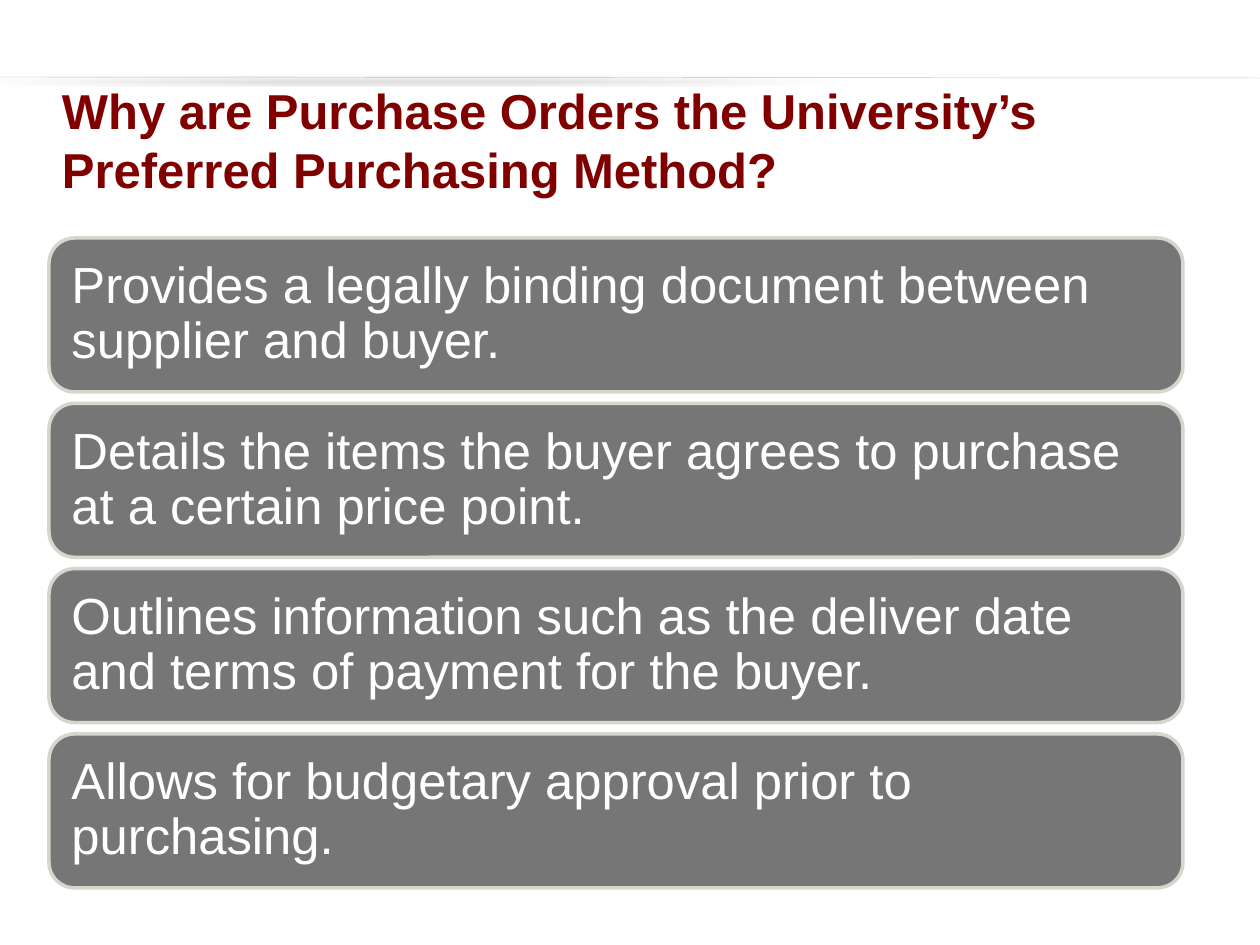
from lxml.etree import SubElement
from pptx import Presentation
from pptx.dml.color import RGBColor
from pptx.enum.shapes import MSO_CONNECTOR, MSO_SHAPE
from pptx.enum.text import MSO_ANCHOR, PP_ALIGN
from pptx.oxml.ns import qn
from pptx.util import Pt

EMU_PER_PX = 914400 // 126

MAROON = RGBColor(0x80, 0x00, 0x00)
WHITE = RGBColor(0xFF, 0xFF, 0xFF)
CARD_GRAY = RGBColor(0x76, 0x76, 0x76)
CARD_BORDER = RGBColor(0xD6, 0xD6, 0xCE)
RULE_GRAY = RGBColor(0xBF, 0xBF, 0xBF)

TITLE = "Why are Purchase Orders the University’s Preferred Purchasing Method?"
REASONS = [
    "Provides a legally binding document between supplier and buyer.",
    "Details the items the buyer agrees to purchase at a certain price point.",
    "Outlines information such as the deliver date and terms of payment for the buyer.",
    "Allows for budgetary approval prior to purchasing.",
]
CARD_LEFT, CARD_WIDTH, CARD_HEIGHT = 49, 1134, 154
FIRST_CARD_TOP, LAST_CARD_TOP = 238, 734


def px(length):
    return round(length * EMU_PER_PX)


def write_text(shape, text, *, size, color, bold=False, spacing=1.0, inset=13):
    frame = shape.text_frame
    frame.word_wrap = True
    frame.vertical_anchor = MSO_ANCHOR.MIDDLE
    frame.margin_left = frame.margin_right = px(inset)
    frame.margin_top = frame.margin_bottom = px(6)
    paragraph = frame.paragraphs[0]
    paragraph.alignment = PP_ALIGN.LEFT
    paragraph.line_spacing = spacing
    run = paragraph.add_run()
    run.text = text
    run.font.name = "Arial"
    run.font.size = Pt(size)
    run.font.bold = bold
    run.font.color.rgb = color


def add_header_rule(slide):
    rule = slide.shapes.add_connector(
        MSO_CONNECTOR.STRAIGHT, 0, px(77), px(1260), px(78))
    rule.line.color.rgb = RULE_GRAY
    rule.line.width = Pt(0.25)
    # Soft shadow falling below the rule
    effects = SubElement(rule._element.spPr, qn("a:effectLst"))
    shadow = SubElement(effects, qn("a:outerShdw"), blurRad=str(Pt(3.1)),
                        dist=str(Pt(1.6)), dir="5400000", rotWithShape="0")
    color = SubElement(shadow, qn("a:srgbClr"), val="000000")
    SubElement(color, qn("a:alpha"), val="38000")


def add_title(slide):
    title = slide.shapes.add_textbox(px(49), px(91), px(1163), px(96))
    write_text(title, TITLE, size=28, color=MAROON, bold=True)


def add_reason_card(slide, top, text):
    card = slide.shapes.add_shape(
        MSO_SHAPE.ROUNDED_RECTANGLE,
        px(CARD_LEFT), px(top), px(CARD_WIDTH), px(CARD_HEIGHT))
    card.shadow.inherit = False
    card.fill.solid()
    card.fill.fore_color.rgb = CARD_GRAY
    card.line.color.rgb = CARD_BORDER
    card.line.width = Pt(2)
    write_text(card, text, size=29, color=WHITE, spacing=0.9, inset=15)


def main():
    presentation = Presentation()
    presentation.slide_width = px(1260)
    presentation.slide_height = px(945)
    slide = presentation.slides.add_slide(presentation.slide_layouts[6])

    # Header
    add_header_rule(slide)
    add_title(slide)

    # Evenly stacked reasons
    pitch = (LAST_CARD_TOP - FIRST_CARD_TOP) / (len(REASONS) - 1)
    for index, reason in enumerate(REASONS):
        add_reason_card(slide, FIRST_CARD_TOP + index * pitch, reason)

    presentation.save("out.pptx")


if __name__ == "__main__":
    main()
